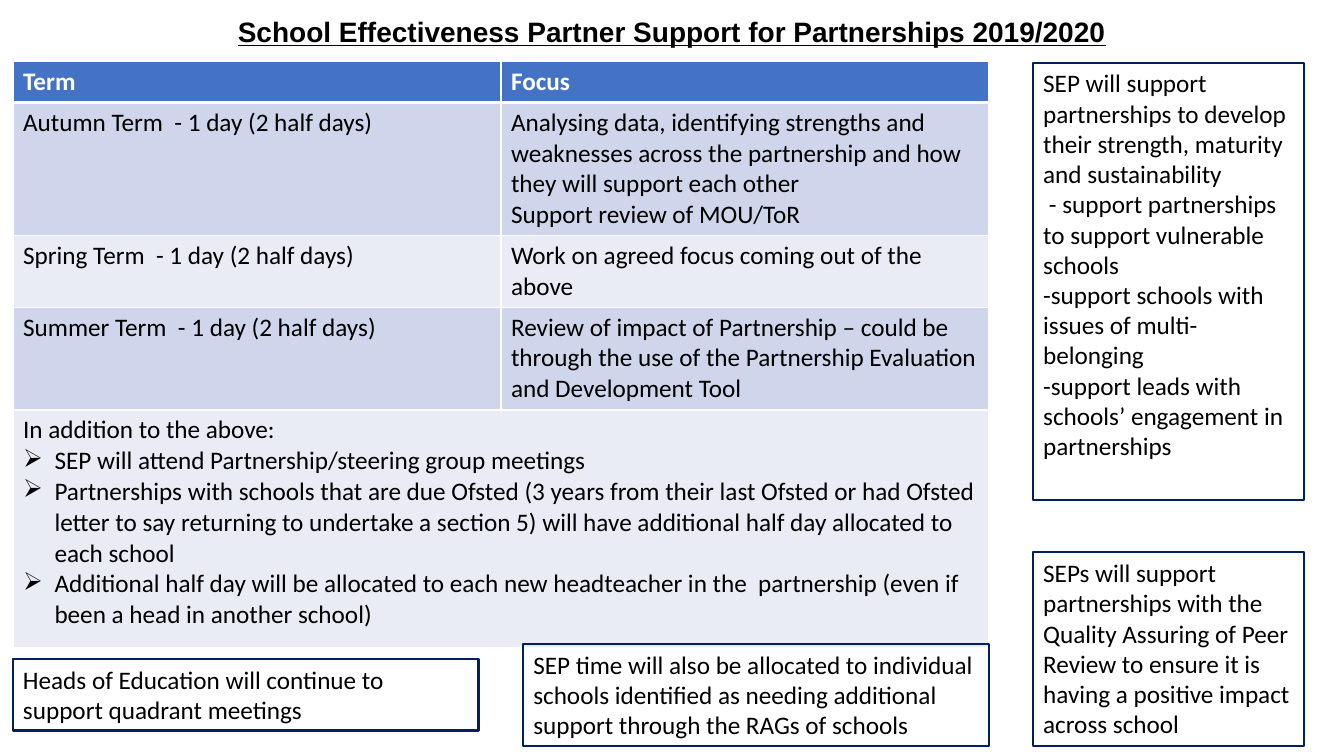
import pptx
import pptx.util
import pptx.dml.color
import pptx.enum.text
import pptx.oxml
from dataclasses import dataclass
from pptx.util import Cm

# Content
TITLE = "School Effectiveness Partner Support for Partnerships 2019/2020"
BULLET = "➢"
ROWS = [
    (["Term"], ["Focus"]),
    (["Autumn Term  - 1 day (2 half days)"],
     ["Analysing data, identifying strengths and weaknesses across the partnership "
      "and how they will support each other",
      "Support review of MOU/ToR"]),
    (["Spring Term  - 1 day (2 half days)"],
     ["Work on agreed focus coming out of the above"]),
    (["Summer Term  - 1 day (2 half days)"],
     ["Review of impact of Partnership – could be through the use of the "
      "Partnership Evaluation and Development Tool"]),
]
ADDITION = "In addition to the above:"
ADDITION_POINTS = [
    "SEP will attend Partnership/steering group meetings",
    "Partnerships with schools that are due Ofsted (3 years from their last Ofsted or "
    "had Ofsted letter to say returning to undertake a section 5) will have additional "
    "half day allocated to each school",
    "Additional half day will be allocated to each new headteacher in the  partnership "
    "(even if been a head in another school)",
]
DEVELOPMENT = [
    "SEP will support partnerships to develop their strength, maturity and sustainability",
    " - support partnerships to support vulnerable schools",
    "-support schools with issues of multi-belonging",
    "-support leads with schools’ engagement in partnerships",
]
QUADRANTS = ["Heads of Education will continue to support quadrant meetings"]
PEER_REVIEW = ["SEPs will support partnerships with the Quality Assuring of Peer Review "
               "to ensure it is having a positive impact across school"]
SEP_TIME = ["SEP time will also be allocated to individual schools identified as needing "
            "additional support through the RAGs of schools"]


@dataclass(frozen=True)
class Theme:
    black: str = "000000"
    white: str = "FFFFFF"
    navy: str = "002060"
    header: str = "4472C4"
    bands: tuple = ("CFD5EA", "E9EBF5")
    title_font: str = "Arial"
    body_font: str = "Calibri"
    title_size: int = 20
    body_size: int = 18


T = Theme()

# Layout, in centimetres
LEFT, TABLE_TOP, TABLE_W = 0.33, 1.55, 24.59
ROW_HEIGHTS = [1.02, 3.32, 1.78, 2.59, 6]
SIDE_X, SIDE_W = 26.04, 6.83
LOWER_W = 11.73
LOWER_X = LEFT + TABLE_W - LOWER_W
NOTES = [
    (DEVELOPMENT, SIDE_X, 1.58, SIDE_W, 11.02),
    (QUADRANTS, LEFT, 16.61, LOWER_W, 1.8),
    (PEER_REVIEW, SIDE_X, 13.92, SIDE_W, 4.88),
    (SEP_TIME, LOWER_X, 16.23, LOWER_W, 2.57),
]


def rgb(code):
    return pptx.dml.color.RGBColor.from_string(code)


def write(tf, text, first=False, size=T.body_size, font=T.body_font, color=T.black,
          bold=False, underline=False, align=None, spacing=None, bullet=None):
    p = tf.paragraphs[0] if first else tf.add_paragraph()
    p.alignment = align
    p.line_spacing = spacing
    if bullet:
        pPr = p._p.get_or_add_pPr()
        pPr.set("marL", str(Cm(0.79)))
        pPr.set("indent", str(-Cm(0.79)))
        pPr.append(pptx.oxml.parse_xml(
            f'<a:buChar {pptx.oxml.ns.nsdecls("a")} char="{bullet}"/>'))
    r = p.add_run()
    r.text = text
    r.font.size = pptx.util.Pt(size)
    r.font.name = font
    r.font.color.rgb = rgb(color)
    r.font.bold = bold
    r.font.underline = underline


def write_all(tf, texts, **style):
    for i, text in enumerate(texts):
        write(tf, text, first=i == 0, **style)


def add_box(s, x, y, w, h):
    sp = s.shapes.add_textbox(Cm(x), Cm(y), Cm(w), Cm(h))
    sp.text_frame.word_wrap = True
    sp.text_frame.auto_size = pptx.enum.text.MSO_AUTO_SIZE.NONE
    return sp


def style_cell(cell, fill, bottom=1):
    tcPr = cell._tc.get_or_add_tcPr()
    for side, width in zip("LRTB", (1, 1, 1, bottom)):
        tcPr.append(pptx.oxml.parse_xml(
            f'<a:ln{side} {pptx.oxml.ns.nsdecls("a")} w="{pptx.util.Pt(width)}">'
            f'<a:solidFill><a:srgbClr val="{T.white}"/></a:solidFill></a:ln{side}>'))
    cell.fill.solid()
    cell.fill.fore_color.rgb = rgb(fill)


def add_term_table(s):
    table = s.shapes.add_table(len(ROW_HEIGHTS), 2, Cm(LEFT), Cm(TABLE_TOP),
                               Cm(TABLE_W), Cm(sum(ROW_HEIGHTS))).table
    for col in table.columns:
        col.width = Cm(TABLE_W / 2)
    for i, height in enumerate(ROW_HEIGHTS):
        table.rows[i].height = Cm(height)
        for cell in table.rows[i].cells:
            style_cell(cell, T.bands[(i - 1) % 2] if i else T.header, 1 if i else 3)
    for i, row in enumerate(ROWS):
        for j, texts in enumerate(row):
            write_all(table.cell(i, j).text_frame, texts, bold=i == 0,
                      color=T.black if i else T.white)

    # Last row across both columns
    last = len(ROWS)
    table.cell(last, 0).merge(table.cell(last, 1))
    tf = table.cell(last, 0).text_frame
    write(tf, ADDITION, first=True)
    for point in ADDITION_POINTS:
        write(tf, point, bullet=BULLET)


def main():
    prs = pptx.Presentation()
    prs.slide_width, prs.slide_height = Cm(33.87), Cm(19.05)
    s = prs.slides.add_slide(prs.slide_layouts[6])

    # Title
    tf = add_box(s, 2.33, 0, 29.21, 1.68).text_frame
    tf.vertical_anchor = pptx.enum.text.MSO_ANCHOR.MIDDLE
    write(tf, TITLE, first=True, size=T.title_size, font=T.title_font, bold=True,
          underline=True, align=pptx.enum.text.PP_ALIGN.CENTER, spacing=0.9)

    # Terms and their focus
    add_term_table(s)

    # Outlined notes
    for texts, *place in NOTES:
        sp = add_box(s, *place)
        sp.line.color.rgb = rgb(T.navy)
        sp.line.width = pptx.util.Pt(1.5)
        write_all(sp.text_frame, texts)

    prs.save("out.pptx")


if __name__ == "__main__":
    main()
